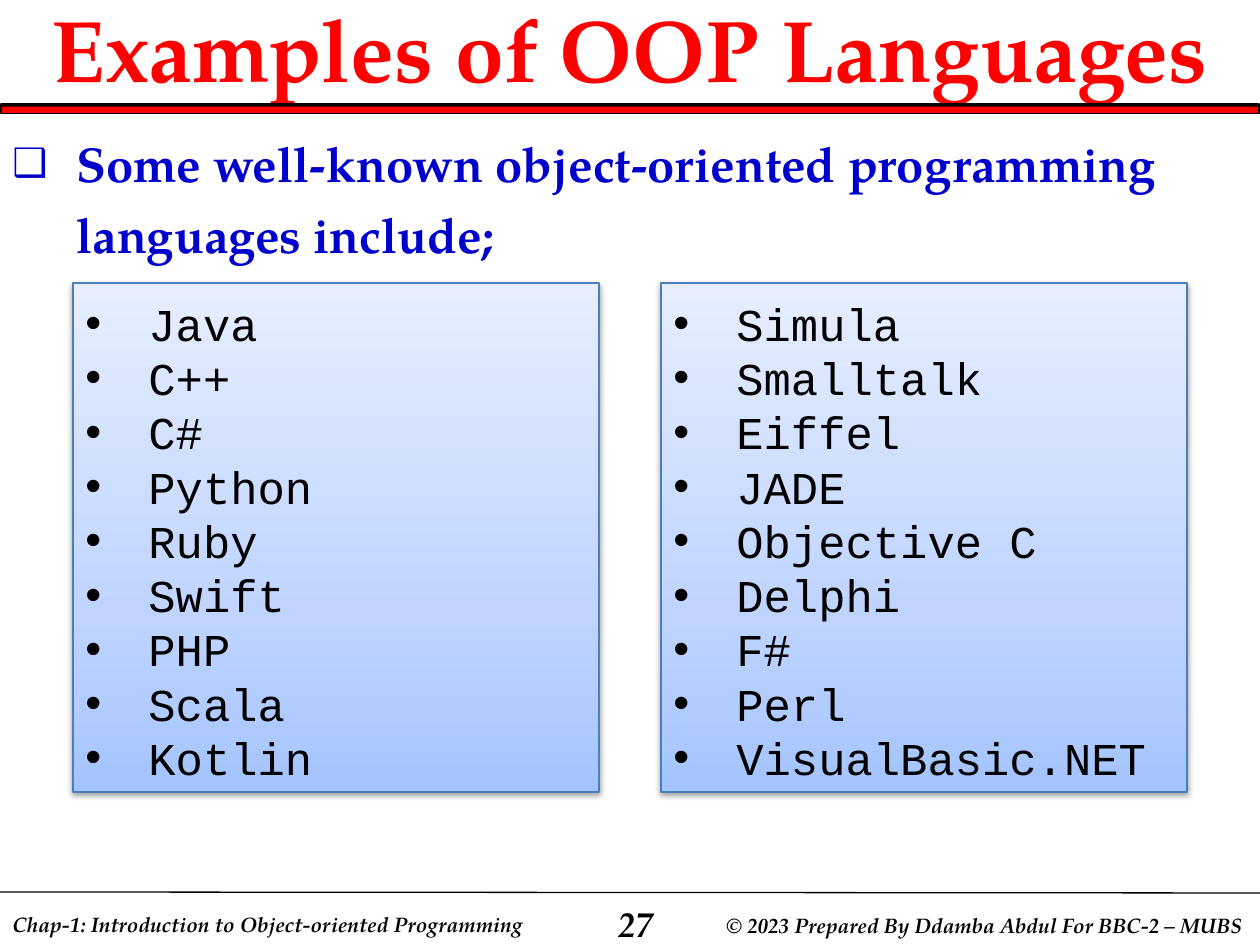
"""Builds the slide listing examples of object-oriented languages."""
from pptx import Presentation
from pptx.dml.color import RGBColor
from pptx.enum.shapes import MSO_CONNECTOR as Connector, MSO_SHAPE as Shape
from pptx.enum.text import MSO_ANCHOR as Anchor, MSO_AUTO_SIZE as AutoSize, PP_ALIGN as Align
from pptx.oxml import parse_xml
from pptx.oxml.ns import nsdecls, qn
from pptx.oxml.xmlchemy import OxmlElement
from pptx.util import Pt


def px(length):
    return round(length * 914400 / 126)


def colour(hex_code):
    return RGBColor.from_string(hex_code)


class SlideBuilder:
    serif = "TeX Gyre Pagella"
    mono = "Courier New"
    black, white, red, blue = "000000", "FFFFFF", "FF0000", "0000CC"
    card_line = "4B7EBC"
    card_stops = ((0, "A4C4FF"), (35, "BFD4FF"), (100, "E6EEFF"))

    def __init__(self, deck):
        self.slide = deck.slides.add_slide(deck.slide_layouts[5])

    def paint(self, shape, fill, line, weight):
        shape.fill.solid()
        shape.fill.fore_color.rgb = colour(fill)
        shape.line.color.rgb = colour(line)
        shape.line.width = Pt(weight)

    def set_text(self, shape, lines, size, hex_code, font=serif, bold=True, italic=False,
                 align=Align.LEFT, anchor=Anchor.TOP, spacing=None, bullet=None):
        frame = shape.text_frame
        frame.text = "\n".join(lines)
        frame.word_wrap = True
        frame.auto_size = AutoSize.NONE
        frame.vertical_anchor = anchor
        for paragraph in frame.paragraphs:
            paragraph.alignment = align
            if spacing:
                paragraph.line_spacing = spacing
            if bullet:
                self.add_bullet(paragraph, *bullet)
            for run in paragraph.runs:
                run.font.name = font
                run.font.size = Pt(size)
                run.font.bold = bold
                run.font.italic = italic
                run.font.color.rgb = colour(hex_code)

    def add_bullet(self, paragraph, mark, indent, percent):
        properties = paragraph._p.get_or_add_pPr()
        properties.set("marL", str(px(indent)))
        properties.set("indent", str(-px(indent)))
        for tag, key, value in (("a:buSzPct", "val", str(percent * 1000)),
                                ("a:buFont", "typeface", "Arial"),
                                ("a:buChar", "char", mark)):
            element = OxmlElement(tag)
            element.set(key, value)
            properties.append(element)

    def title(self, text, *box):
        heading = self.slide.shapes.title
        heading.left, heading.top, heading.width, heading.height = map(px, box)
        self.paint(heading, self.white, self.white, 2)
        self.set_text(heading, [text], 50, self.red, align=Align.CENTER, anchor=Anchor.MIDDLE)

    def panel(self, box, fill, line, weight=2, kind=Shape.RECTANGLE):
        shape = self.slide.shapes.add_shape(kind, *map(px, box))
        shape.shadow.inherit = False
        self.paint(shape, fill, line, weight)
        return shape

    def statement(self, text, *box):
        body = self.panel(box, self.white, self.white)
        self.set_text(body, [text], 28, self.blue, spacing=1.2, bullet=("❑", 64, 80))

    def language_card(self, languages, *box):
        card = self.panel(box, self.card_stops[0][1], self.card_line, 0.75)
        properties = card._element.spPr
        stops = "".join(f'<a:gs pos="{position * 1000}"><a:srgbClr val="{shade}"/></a:gs>'
                        for position, shade in self.card_stops)
        gradient = parse_xml(f'<a:gradFill {nsdecls("a")} rotWithShape="1"><a:gsLst>{stops}'
                             '</a:gsLst><a:lin ang="16200000" scaled="0"/></a:gradFill>')
        properties.replace(properties.find(qn("a:solidFill")), gradient)
        properties.find(qn("a:effectLst")).append(parse_xml(
            f'<a:outerShdw {nsdecls("a")} blurRad="40000" dist="20000" dir="5400000" '
            f'rotWithShape="0"><a:srgbClr val="{self.black}"><a:alpha val="38000"/>'
            '</a:srgbClr></a:outerShdw>'))
        card.text_frame.margin_top = px(13)
        self.set_text(card, languages, 26, self.black, font=self.mono, bold=False,
                      spacing=Pt(31), bullet=("•", 63, 100))

    def rule(self, *ends):
        line = self.slide.shapes.add_connector(Connector.STRAIGHT, *map(px, ends))
        line.line.color.rgb = colour(self.black)
        line.line.width = Pt(0.75)
        line._element.spPr.append(OxmlElement("a:effectLst"))

    def footer(self, text, box, size=12, align=Align.LEFT, anchor=Anchor.MIDDLE):
        note = self.slide.shapes.add_textbox(*map(px, box))
        self.set_text(note, [text], size, self.black, italic=True, align=align, anchor=anchor)


def main():
    deck = Presentation()
    deck.slide_width, deck.slide_height = px(1260), px(945)
    page = SlideBuilder(deck)
    page.title("Examples of OOP Languages", 0, 0, 1260, 95)
    page.panel((0, 105, 1260, 10), page.red, page.black, kind=Shape.ROUNDED_RECTANGLE)
    page.statement("Some well-known object-oriented programming languages include;",
                   0, 116, 1260, 787)
    columns = (
        ["Java", "C++", "C#", "Python", "Ruby", "Swift", "PHP", "Scala", "Kotlin"],
        ["Simula", "Smalltalk", "Eiffel", "JADE", "Objective C", "Delphi", "F#", "Perl",
         "VisualBasic.NET"],
    )
    for index, languages in enumerate(columns):
        page.language_card(languages, 73 + index * 588, 283, 526, 509)
    page.footer("Chap-1: Introduction to Object-oriented Programming", (0, 903, 609, 42))
    page.footer("© 2023 Prepared By Ddamba Abdul For BBC-2 – MUBS", (714, 902, 546, 42),
                anchor=Anchor.BOTTOM)
    page.rule(0, 892, 1260, 893)
    page.footer("27", (557, 902, 158, 43), size=20, align=Align.CENTER)
    deck.save("out.pptx")


if __name__ == "__main__":
    main()
